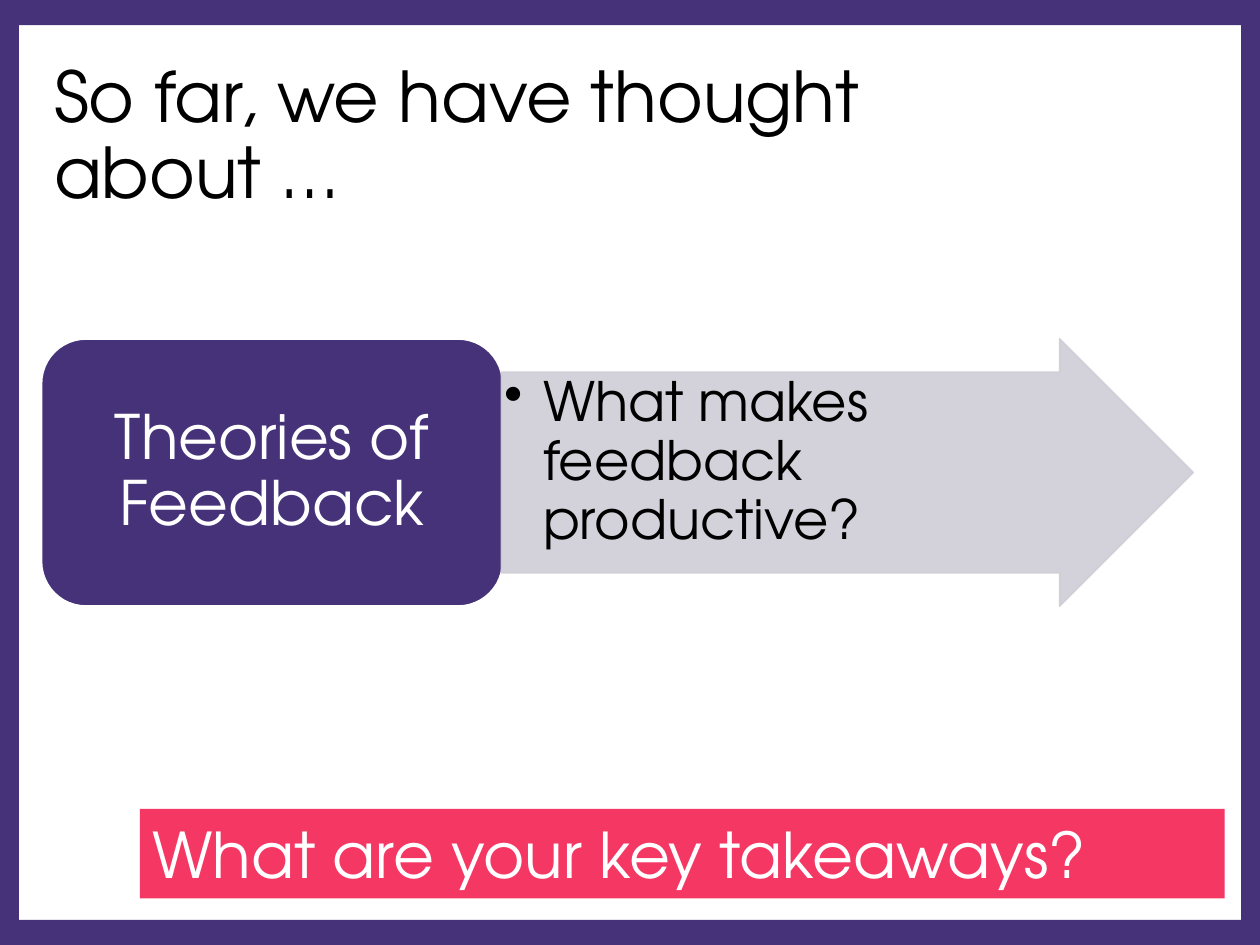
from lxml.etree import SubElement
from pptx import Presentation
from pptx.dml.color import RGBColor
from pptx.enum.shapes import MSO_SHAPE
from pptx.enum.text import MSO_ANCHOR, PP_ALIGN
from pptx.oxml.ns import qn
from pptx.util import Inches, Pt

PURPLE, PINK, GREY = "463278", "F53764", "CFCED6"
BLACK, WHITE = "000000", "FFFFFF"


def color(value):
    return RGBColor.from_string(value)


class SlideBuilder:
    font_name = "TeX Gyre Adventor"

    def __init__(self, presentation):
        self.slide = presentation.slides.add_slide(presentation.slide_layouts[5])

    def add_text(self, shape, text, size, text_color, align=PP_ALIGN.LEFT,
                 anchor=MSO_ANCHOR.MIDDLE, line_spacing=0.9,
                 insets=(0.1, 0.05, 0.1, 0.05), bullet_indent=None):
        frame = shape.text_frame
        frame.word_wrap = True
        frame.vertical_anchor = anchor
        (frame.margin_left, frame.margin_top,
         frame.margin_right, frame.margin_bottom) = map(Inches, insets)
        frame.text = text
        paragraph = frame.paragraphs[0]
        paragraph.alignment = align
        paragraph.line_spacing = line_spacing
        if bullet_indent:
            properties = paragraph._p.get_or_add_pPr()
            properties.set("marL", str(Inches(bullet_indent)))
            properties.set("indent", str(-Inches(bullet_indent)))
            SubElement(properties, qn("a:buChar")).set("char", "•")
        paragraph.font.name = self.font_name
        paragraph.font.size = Pt(size)
        paragraph.font.color.rgb = color(text_color)

    def title(self, box, text):
        title = self.slide.shapes.title
        title.left, title.top, title.width, title.height = map(Inches, box)
        self.add_text(title, text, 40, BLACK)

    def shape(self, kind, box, fill, line=None, opacity=None):
        shape = self.slide.shapes.add_shape(kind, *map(Inches, box))
        shape.shadow.inherit = False
        shape.fill.solid()
        shape.fill.fore_color.rgb = color(fill)
        if line:
            shape.line.color.rgb = color(line)
            shape.line.width = Pt(1)
        else:
            shape.line.fill.background()
        if opacity:
            for element in shape._element.spPr.iter(qn("a:srgbClr")):
                SubElement(element, qn("a:alpha")).set("val", str(opacity * 1000))
        return shape

    def frame(self, width, height, side, edge):
        for box in ((0, 0, side, height), (width - side, 0, side, height),
                    (0, 0, width, edge), (0, height - edge, width, edge)):
            self.shape(MSO_SHAPE.RECTANGLE, box, PURPLE)


def main():
    width, height = 10, 7.5
    presentation = Presentation()
    presentation.slide_width = Inches(width)
    presentation.slide_height = Inches(height)
    builder = SlideBuilder(presentation)

    builder.frame(width, height, 0.15, 0.2)
    builder.title((0.33, 0.37, 8.62, 1.45), "So far, we have thought\vabout …")

    topic = builder.shape(MSO_SHAPE.ROUNDED_RECTANGLE, (0.33, 2.69, 3.66, 2.12),
                          PURPLE, line=WHITE)
    builder.add_text(topic, "Theories of Feedback", 35, WHITE,
                     align=PP_ALIGN.CENTER, insets=(0.15, 0.07, 0.15, 0.07))

    arrow = builder.shape(MSO_SHAPE.RIGHT_ARROW, (3.98, 2.69, 5.49, 2.12),
                          GREY, line=GREY, opacity=90)
    arrow.adjustments[0] = 0.75
    arrow.adjustments[1] = 0.5
    builder.add_text(arrow, "What makes feedback productive?", 31, BLACK,
                     anchor=MSO_ANCHOR.TOP, insets=(0.02, 0.02, 0.54, 0.02),
                     bullet_indent=0.31)

    question = builder.shape(MSO_SHAPE.RECTANGLE, (1.11, 6.42, 8.61, 0.71), PINK)
    builder.add_text(question, "What are your key takeaways?", 36, WHITE,
                     anchor=MSO_ANCHOR.TOP, line_spacing=1.0)

    presentation.save("out.pptx")


if __name__ == "__main__":
    main()
